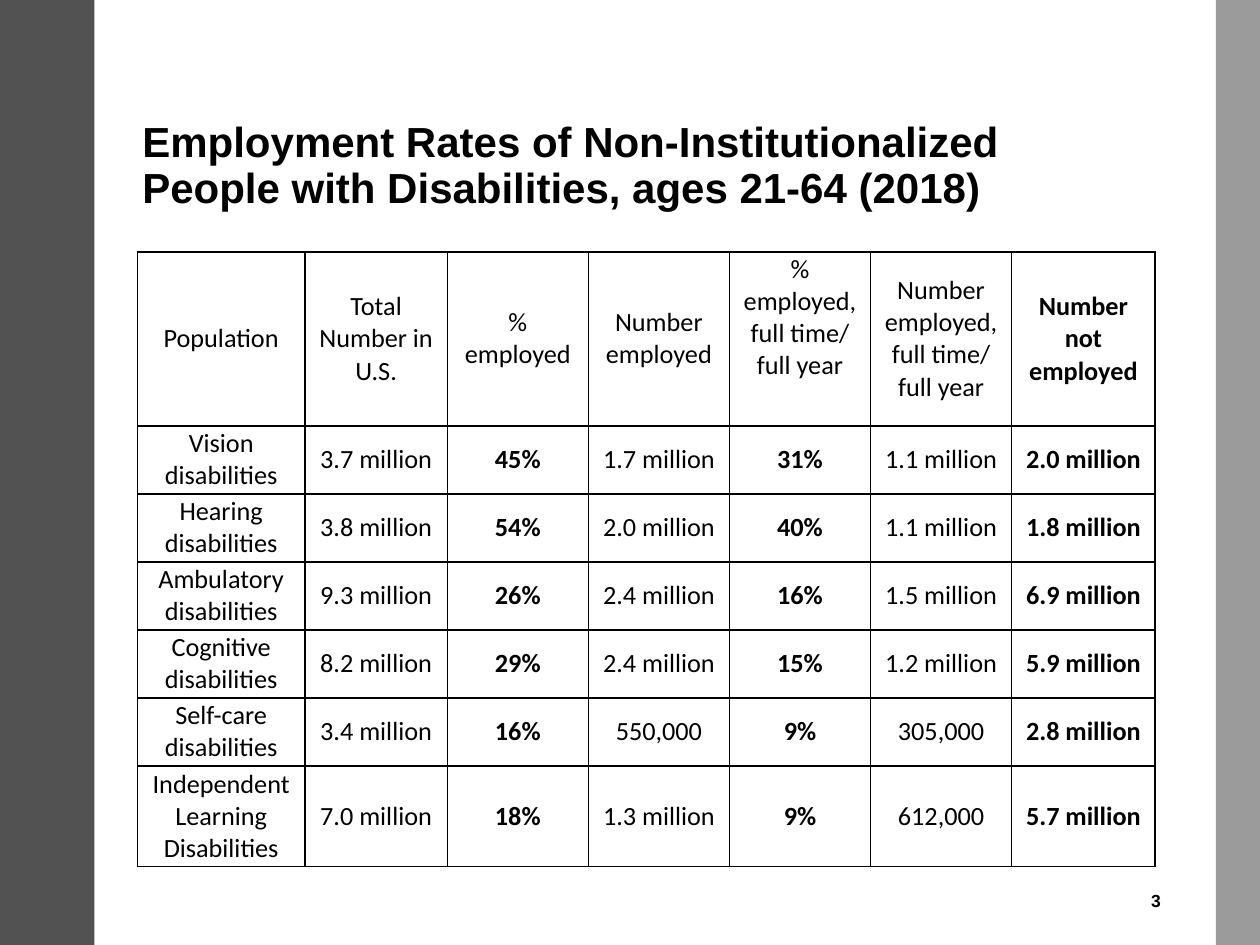
from dataclasses import dataclass

from lxml import etree
from pptx import Presentation
from pptx import util as u
from pptx.dml.color import RGBColor
from pptx.enum import shapes, text
from pptx.oxml import ns


@dataclass
class Theme:
    ink: str = "000000"
    left_bar: str = "525252"
    right_bar: str = "595959"
    right_bar_alpha: int = 60
    heading_font: str = "Arial"
    table_font: str = "Calibri"
    title_size: int = 24
    table_size: int = 15
    number_size: int = 10
    border_width: int = 1


theme = Theme()


def set_all(target, **values):
    for name, value in values.items():
        setattr(target, name, value)


def write(frame, wording, font, size, bold, **para_format):
    frame.word_wrap = True
    frame.vertical_anchor = text.MSO_ANCHOR.MIDDLE
    para = frame.paragraphs[0]
    set_all(para, **para_format)
    span = para.add_run()
    span.text = wording
    set_all(span.font, name=font, size=u.Pt(size), bold=bold)
    span.font.color.rgb = RGBColor.from_string(theme.ink)


deck = Presentation()
set_all(deck, slide_width=u.Inches(10), slide_height=u.Inches(7.5))
page = deck.slides.add_slide(deck.slide_layouts.get_by_name("Title Only"))

title = page.shapes.title
set_all(title, left=u.Inches(1.03), top=u.Inches(0.6), width=u.Inches(8.09), height=u.Inches(1.45))
title.text_frame.auto_size = text.MSO_AUTO_SIZE.NONE
write(
    title.text_frame,
    "Employment Rates of Non-Institutionalized People with Disabilities, ages 21-64 (2018)",
    theme.heading_font, theme.title_size, True,
    alignment=text.PP_ALIGN.LEFT, line_spacing=0.9,
)

bars = [(0, 0.75, theme.left_bar, 100), (9.65, 0.38, theme.right_bar, theme.right_bar_alpha)]
for left, width, color, opacity in bars:
    bar = page.shapes.add_shape(
        shapes.MSO_SHAPE.RECTANGLE, u.Inches(left), 0, u.Inches(width), deck.slide_height
    )
    bar.shadow.inherit = False
    bar.line.fill.background()
    bar.fill.solid()
    bar.fill.fore_color.rgb = RGBColor.from_string(color)
    if opacity < 100:
        tint = bar.fill._xPr.find(".//" + ns.qn("a:srgbClr"))
        etree.SubElement(tint, ns.qn("a:alpha"), val=str(opacity * 1000))

number_box = page.shapes.add_textbox(u.Inches(7.06), u.Inches(6.95), u.Inches(2.25), u.Inches(0.4))
write(
    number_box.text_frame, "3", theme.heading_font, theme.number_size, True,
    alignment=text.PP_ALIGN.RIGHT, space_after=u.Pt(6),
)

rows = [
    ["Population", "Total Number in U.S.", "% employed", "Number employed",
     "% employed, full time/ full year", "Number employed, full time/ full year",
     "Number not employed"],
    ["Vision disabilities", "3.7 million", "45%", "1.7 million", "31%", "1.1 million", "2.0 million"],
    ["Hearing disabilities", "3.8 million", "54%", "2.0 million", "40%", "1.1 million", "1.8 million"],
    ["Ambulatory disabilities", "9.3 million", "26%", "2.4 million", "16%", "1.5 million", "6.9 million"],
    ["Cognitive disabilities", "8.2 million", "29%", "2.4 million", "15%", "1.2 million", "5.9 million"],
    ["Self-care disabilities", "3.4 million", "16%", "550,000", "9%", "305,000", "2.8 million"],
    ["Independent Learning Disabilities", "7.0 million", "18%", "1.3 million", "9%", "612,000", "5.7 million"],
]
column_widths = [1.33, 1.13] + [1.12] * 4 + [1.14]
row_heights = [1.38] + [0.54] * 5 + [0.8]
percent_columns = (2, 4)
last_column = len(column_widths) - 1

table = page.shapes.add_table(
    len(rows), len(column_widths), u.Inches(1.09), u.Inches(2),
    u.Inches(sum(column_widths)), u.Inches(sum(row_heights)),
).table
set_all(table, first_row=False, horz_banding=False)
for column, width in zip(table.columns, column_widths):
    column.width = u.Inches(width)

for row_index, (row, height) in enumerate(zip(rows, row_heights)):
    is_header = row_index == 0
    table.rows[row_index].height = u.Inches(height)
    for column_index, wording in enumerate(row):
        cell = table.cell(row_index, column_index)
        raised = is_header and column_index == 4
        set_all(
            cell,
            margin_left=u.Inches(0.06), margin_right=u.Inches(0.06),
            margin_top=0, margin_bottom=u.Inches(0.34 if raised else 0),
            vertical_anchor=text.MSO_ANCHOR.MIDDLE,
        )
        bold = column_index == last_column or (not is_header and column_index in percent_columns)
        write(
            cell.text_frame, wording, theme.table_font, theme.table_size, bold,
            alignment=text.PP_ALIGN.CENTER, space_after=u.Pt(6 if is_header else 9),
        )
        properties = cell._tc.get_or_add_tcPr()
        for side in ("lnL", "lnR", "lnT", "lnB"):
            border = etree.SubElement(
                properties, ns.qn("a:" + side), w=str(u.Pt(theme.border_width))
            )
            paint = etree.SubElement(border, ns.qn("a:solidFill"))
            etree.SubElement(paint, ns.qn("a:srgbClr"), val=theme.ink)
        cell.fill.background()

deck.save("out.pptx")
